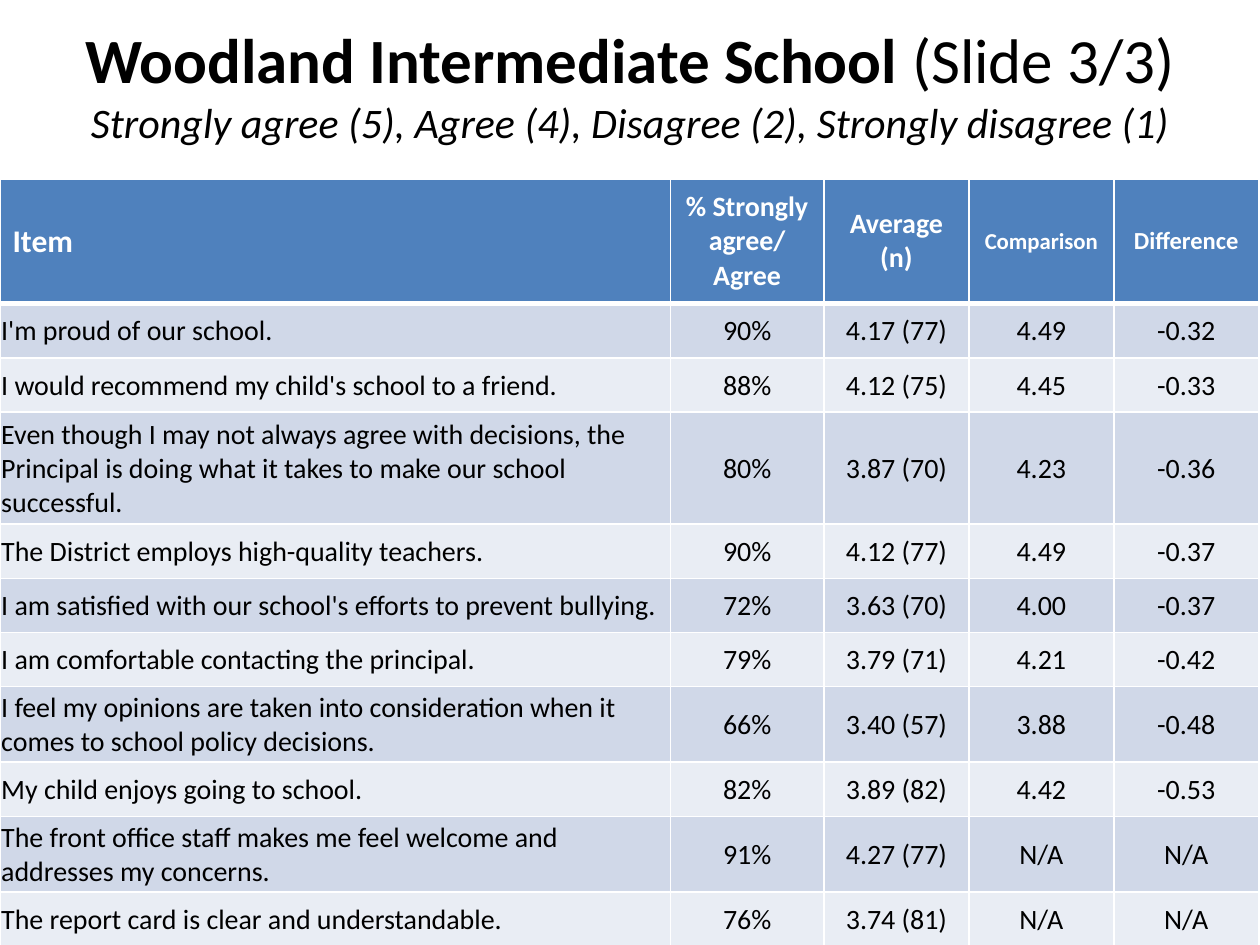
import copy

import pptx
import pptx.dml.color
import pptx.enum.text
import pptx.oxml.ns
import pptx.util
from lxml import etree

Inches = pptx.util.Inches
Pt = pptx.util.Pt
ALIGN = pptx.enum.text.PP_ALIGN
MIDDLE = pptx.enum.text.MSO_ANCHOR.MIDDLE

COLORS = {"text": "000000", "white": "FFFFFF", "head": "4F81BD",
          "odd": "D0D8E8", "even": "E9EDF4"}
COLS = [5.32, 1.22, 1.15, 1.15, 1.15]
HEADS = [("Item", 18), ("% Strongly agree/ Agree", 16), ("Average (n)", 16),
         ("Comparison", 13), ("Difference", 14)]
HEAD_HIGH = 0.99
# Row height, then the cell texts
ITEMS = [
    (0.43, "I'm proud of our school.", "90%", "4.17 (77)", "4.49", "-0.32"),
    (0.43, "I would recommend my child's school to a friend.",
     "88%", "4.12 (75)", "4.45", "-0.33"),
    (0.89, "Even though I may not always agree with decisions, the Principal "
     "is doing what it takes to make our school successful.",
     "80%", "3.87 (70)", "4.23", "-0.36"),
    (0.43, "The District employs high-quality teachers.",
     "90%", "4.12 (77)", "4.49", "-0.37"),
    (0.43, "I am satisfied with our school's efforts to prevent bullying.",
     "72%", "3.63 (70)", "4.00", "-0.37"),
    (0.43, "I am comfortable contacting the principal.",
     "79%", "3.79 (71)", "4.21", "-0.42"),
    (0.6, "I feel my opinions are taken into consideration when it comes to "
     "school policy decisions.", "66%", "3.40 (57)", "3.88", "-0.48"),
    (0.43, "My child enjoys going to school.",
     "82%", "3.89 (82)", "4.42", "-0.53"),
    (0.6, "The front office staff makes me feel welcome and addresses my "
     "concerns.", "91%", "4.27 (77)", "N/A", "N/A"),
    (0.43, "The report card is clear and understandable.",
     "76%", "3.74 (81)", "N/A", "N/A"),
]


def rgb(name):
    return pptx.dml.color.RGBColor.from_string(COLORS[name])


def apply(obj, values):
    for key, value in values.items():
        setattr(obj, key, value)


def add_run(para, text, size, color="text", **style):
    run = para.add_run()
    run.text = text
    apply(run.font, {"name": "Calibri", "size": Pt(size), **style})
    run.font.color.rgb = rgb(color)
    return run


def add_break(para, run):
    """Break the line at the same text size as the run before it."""
    para.add_line_break()
    mark = para._p.findall(pptx.oxml.ns.qn("a:br"))[-1]
    mark.append(copy.deepcopy(run._r.rPr))


def add_edges(cell, widths):
    props = cell._tc.get_or_add_tcPr()
    qn = pptx.oxml.ns.qn
    for side, width in zip("LRTB", widths):
        line = etree.SubElement(props, qn(f"a:ln{side}"), w=str(Pt(width)))
        fill = etree.SubElement(line, qn("a:solidFill"))
        etree.SubElement(fill, qn("a:srgbClr"), val=COLORS["white"])


def fill_cell(cell, text, size, fill, color, bold, align, edges):
    add_edges(cell, edges)
    cell.fill.solid()
    cell.fill.fore_color.rgb = rgb(fill)
    cell.vertical_anchor = MIDDLE
    para = cell.text_frame.paragraphs[0]
    para.alignment = align
    add_run(para, text, size, color, bold=bold)


def add_title(slide):
    title = slide.shapes.title
    apply(title, {"left": 0, "top": 0, "width": Inches(10),
                  "height": Inches(1.33)})
    frame = title.text_frame
    apply(frame, {"vertical_anchor": MIDDLE, "word_wrap": True,
                  "auto_size": pptx.enum.text.MSO_AUTO_SIZE.NONE})
    para = frame.paragraphs[0]
    para.alignment = ALIGN.CENTER
    add_run(para, "Woodland Intermediate School ", 36, bold=True)
    part = add_run(para, "(Slide 3/3)", 36, bold=False)
    add_break(para, part)
    add_run(para, "Strongly agree (5), Agree (4), Disagree (2), "
            "Strongly disagree (1)", 24, bold=False, italic=True)


def add_grid(slide):
    highs = [HEAD_HIGH] + [item[0] for item in ITEMS]
    grid = slide.shapes.add_table(
        len(highs), len(COLS), 0, Inches(1.42), Inches(10),
        Inches(sum(highs))).table
    for col, width in zip(grid.columns, COLS):
        col.width = Inches(width)
    for row, high in zip(grid.rows, highs):
        row.height = Inches(high)
    aligns = [ALIGN.LEFT] + [ALIGN.CENTER] * (len(COLS) - 1)

    # Header row with a thick rule below
    for c, (text, size) in enumerate(HEADS):
        fill_cell(grid.cell(0, c), text, size, "head", "white", True,
                  aligns[c], (1, 1, 1, 3))

    # Banded item rows
    inset = Inches(0.01)
    for r, item in enumerate(ITEMS, 1):
        for c, text in enumerate(item[1:]):
            cell = grid.cell(r, c)
            apply(cell, {"margin_left": inset, "margin_top": inset,
                         "margin_right": inset, "margin_bottom": 0})
            fill_cell(cell, text, 16, "odd" if r % 2 else "even", "text",
                      False, aligns[c], (1, 1, 3 if r == 1 else 1, 1))


def main():
    deck = pptx.Presentation()
    apply(deck, {"slide_width": Inches(10), "slide_height": Inches(7.5)})
    slide = deck.slides.add_slide(deck.slide_layouts[5])
    add_title(slide)
    add_grid(slide)
    deck.save("out.pptx")


if __name__ == "__main__":
    main()
